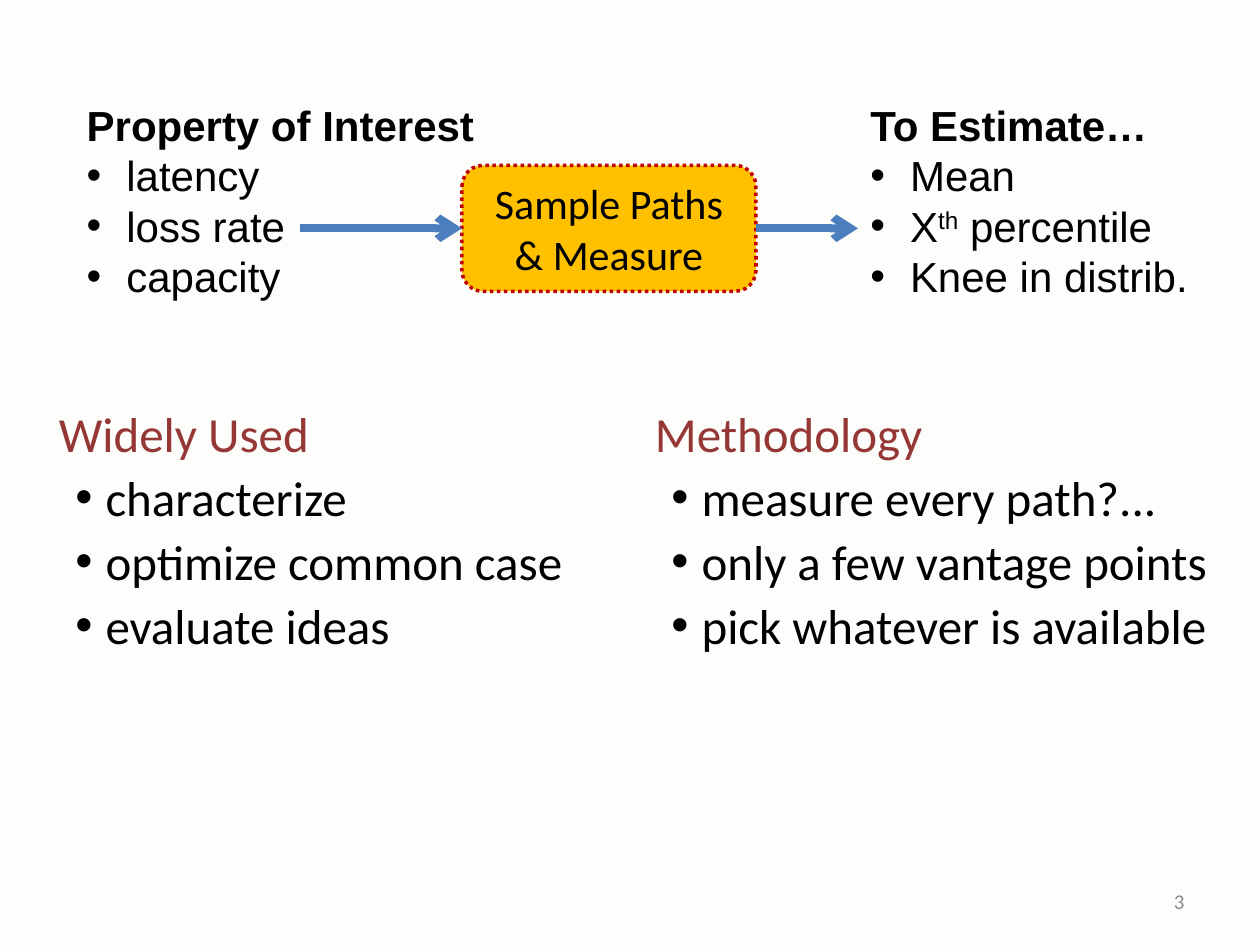
from lxml import etree
from pptx import Presentation
from pptx import util as u
from pptx.dml.color import RGBColor
from pptx.enum import dml, shapes, text
from pptx.oxml import ns

Pt = u.Pt


def tint(code):
    return RGBColor.from_string(code)


def bullet(para, left, hang):
    """Give a paragraph a round bullet with a hanging indent."""
    props = para._p.get_or_add_pPr()
    props.set("marL", str(Pt(left)))
    props.set("indent", str(Pt(-hang)))
    etree.SubElement(props, ns.qn("a:buFont"), typeface="Arial")
    etree.SubElement(props, ns.qn("a:buChar"), char="•")


def write(para, words, font="Calibri", size=24, color="000000", bold=False, rise=0):
    run = para.add_run()
    run.text = words
    face = run.font
    face.name, face.size, face.bold = font, Pt(size), bold
    face.color.rgb = tint(color)
    if rise:
        run._r.get_or_add_rPr().set("baseline", str(rise * 1000))


def frame(slide, box, top=3.6):
    area = slide.shapes.add_textbox(*map(Pt, box)).text_frame
    area.word_wrap = True
    area.margin_top = Pt(top)
    return area


def facts(slide, box, head, items):
    """Upper list: bold head, then items, each a list of (words, rise)."""
    area = frame(slide, box, top=5)
    write(area.paragraphs[0], head, font="Arial", bold=True)
    for parts in items:
        para = area.add_paragraph()
        bullet(para, 16, 16)
        for words, rise in parts:
            write(para, words, font="Arial", rise=rise)
    for para in area.paragraphs:
        para.line_spacing = Pt(28.8)


def notes(slide, box, head, items):
    """Lower list: red head, then plain bulleted items."""
    area = frame(slide, box)
    write(area.paragraphs[0], head, size=28, color="953735")
    for words in items:
        para = area.add_paragraph()
        para.space_before = Pt(3)
        bullet(para, 26.64, 17.28)
        write(para, words, size=28)


def arrow(slide, start, end, y):
    line = slide.shapes.add_connector(
        shapes.MSO_CONNECTOR.STRAIGHT, Pt(start), Pt(y), Pt(end), Pt(y))
    line.line.color.rgb = tint("4B7EBC")
    line.line.width = Pt(4.5)
    etree.SubElement(line.line._get_or_add_ln(), ns.qn("a:tailEnd"), type="arrow")
    etree.SubElement(line._element.spPr, ns.qn("a:effectLst"))
    return line


def flow(slide, box, start, end):
    """Central step with an arrow in from start and an arrow out to end."""
    left, top, width, height = box
    step = slide.shapes.add_shape(
        shapes.MSO_SHAPE.ROUNDED_RECTANGLE, *map(Pt, box))
    step.shadow.inherit = False
    step.fill.solid()
    step.fill.fore_color.rgb = tint("FFC000")
    step.line.color.rgb = tint("C00000")
    step.line.width = Pt(2)
    step.line.dash_style = dml.MSO_LINE.ROUND_DOT
    area = step.text_frame
    area.word_wrap = True
    area.vertical_anchor = text.MSO_ANCHOR.MIDDLE
    para = area.paragraphs[0]
    para.alignment = text.PP_ALIGN.CENTER
    write(para, "Sample Paths & Measure")

    mid = top + height / 2
    arrow(slide, start, left, mid).end_connect(step, 1)
    arrow(slide, left + width, end, mid).begin_connect(step, 3)


def number(slide, box, words):
    area = frame(slide, box)
    area.vertical_anchor = text.MSO_ANCHOR.MIDDLE
    para = area.paragraphs[0]
    para.alignment = text.PP_ALIGN.RIGHT
    write(para, words, size=12, color="8C8C8C")


def main():
    deck = Presentation()
    deck.slide_width, deck.slide_height = Pt(720), Pt(540)
    slide = deck.slides.add_slide(deck.slide_layouts[6])
    back = slide.background.fill
    back.solid()
    back.fore_color.rgb = tint("FDFDFC")

    # Upper row: property, step, estimate
    facts(slide, (42.5, 51.8, 252, 123.8), "Property of Interest",
          [[(" latency", 0)], [(" loss rate", 0)], [(" capacity", 0)]])
    flow(slide, (264, 94.5, 168, 72), 171.4, 490.3)
    facts(slide, (490.3, 51.8, 216, 123.8), "To Estimate…",
          [[(" Mean", 0)],
           [(" X", 0), ("th", 30), (" percentile", 0)],
           [(" Knee in distrib.", 0)]])

    # Lower row: use and method
    notes(slide, (26.6, 226.8, 340.6, 268.6), "Widely Used",
          ["characterize", "optimize common case", "evaluate ideas"])
    notes(slide, (367.2, 226.8, 352.8, 260.6), "Methodology",
          ["measure every path?...", "only a few vantage points",
           "pick whatever is available"])

    # Slide number
    number(slide, (516, 500.5, 168, 28.8), "3")
    deck.save("out.pptx")


if __name__ == "__main__":
    main()
